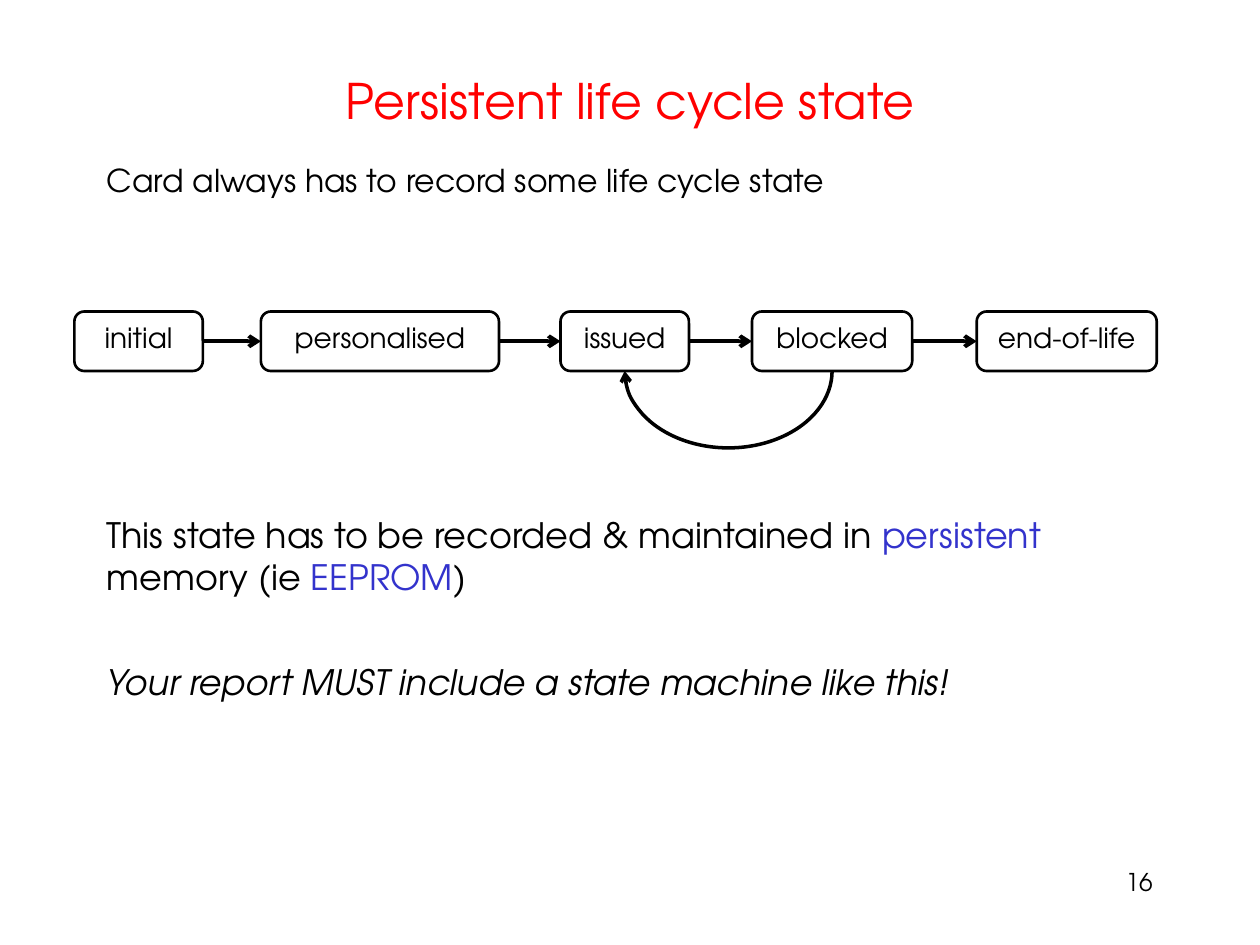
from lxml import etree
from pptx import Presentation
from pptx import util as u
from pptx.dml.color import RGBColor
from pptx.enum import shapes, text
from pptx.oxml import ns

BLACK = RGBColor(0x00, 0x00, 0x00)
RED = RGBColor(0xFF, 0x00, 0x00)
BLUE = RGBColor(0x33, 0x33, 0xCC)
FONT = "TeX Gyre Adventor"

STATES = [
    ("initial", 0, 2.59),
    ("personalised", 3.76, 4.8),
    ("issued", 9.8, 2.59),
    ("blocked", 13.66, 3.23),
    ("end-of-life", 18.19, 3.63),
]
BODY = [
    (0, 18, False, [("Card always has to record some life cycle state", BLACK)]),
    (180, 20, False, [
        ("This state has to be recorded & maintained in ", BLACK),
        ("persistent", BLUE),
        (" memory (ie ", BLACK),
        ("EEPROM", BLUE),
        (")", BLACK),
    ]),
    (36, 20, True, [("Your report MUST include a state machine like this!", BLACK)]),
]


def add_span(para, words, size, color=BLACK, italic=False):
    """Append one formatted run to a paragraph."""
    span = para.add_run()
    span.text = words
    span.font.name = FONT
    span.font.size = u.Pt(size)
    span.font.color.rgb = color
    span.font.italic = italic


def add_text_box(page, left, top, width, height, anchor=text.MSO_ANCHOR.TOP):
    """Add a wrapping text box and return its text frame."""
    box = page.shapes.add_textbox(u.Cm(left), u.Cm(top), u.Cm(width), u.Cm(height))
    frame = box.text_frame
    frame.word_wrap = True
    frame.vertical_anchor = anchor
    return frame


def add_line_label(page, left, top, width, height, words, size, color, align, anchor):
    """Add a single-line label such as the title or page number."""
    para = add_text_box(page, left, top, width, height, anchor).paragraphs[0]
    para.alignment = align
    add_span(para, words, size, color)


def add_body(page, left, top, width, height):
    """Add the statements above and below the state machine."""
    frame = add_text_box(page, left, top, width, height)
    for index, (gap, size, italic, spans) in enumerate(BODY):
        para = frame.add_paragraph() if index else frame.paragraphs[0]
        para.space_before = u.Pt(gap)
        for words, color in spans:
            add_span(para, words, size, color, italic)


def style_arrow(shape, width):
    """Give a line or arc a black stroke that ends in an open arrowhead."""
    shape.line.color.rgb = BLACK
    shape.line.width = u.Pt(width)
    etree.SubElement(shape.line._get_or_add_ln(), ns.qn("a:tailEnd"), type="arrow")


def add_state(page, left, top, width, height, name):
    """Add one rounded state box with its name."""
    box = page.shapes.add_shape(
        shapes.MSO_SHAPE.ROUNDED_RECTANGLE,
        u.Cm(left), u.Cm(top), u.Cm(width), u.Cm(height))
    box.shadow.inherit = False
    box.fill.background()
    box.line.color.rgb = BLACK
    box.line.width = u.Pt(1.5)
    box.text_frame.vertical_anchor = text.MSO_ANCHOR.TOP
    para = box.text_frame.paragraphs[0]
    para.alignment = text.PP_ALIGN.CENTER
    add_span(para, name, 16)
    return box


def add_transition(page, source, target):
    """Join two neighbouring states with a straight arrow."""
    arrow = page.shapes.add_connector(shapes.MSO_CONNECTOR.STRAIGHT, 0, 0, 0, 0)
    arrow.begin_connect(source, 3)
    arrow.end_connect(target, 1)
    style_arrow(arrow, 2.25)
    etree.SubElement(arrow._element.spPr, ns.qn("a:effectLst"))


def add_return_arc(page, source, target, depth):
    """Draw the curved arrow that leads back below two states."""
    start = source.left + source.width // 2
    end = target.left + target.width // 2
    middle = source.top + source.height
    arc = page.shapes.add_shape(
        shapes.MSO_SHAPE.ARC, end, middle - u.Cm(depth), start - end, u.Cm(2 * depth))
    arc.adjustments[0] = 0
    arc.adjustments[1] = 108
    arc.shadow.inherit = False
    arc.fill.background()
    style_arrow(arc, 2)


def add_state_machine(page, left, top, height):
    """Add the row of states and the transitions between them."""
    boxes = {name: add_state(page, left + offset, top, width, height, name)
             for name, offset, width in STATES}
    row = list(boxes.values())
    for source, target in zip(row, row[1:]):
        add_transition(page, source, target)
    add_return_arc(page, boxes["blocked"], boxes["issued"], 1.55)


def main():
    """Build and save the deck."""
    deck = Presentation()
    deck.slide_width, deck.slide_height = u.Cm(25.4), u.Cm(19.05)
    page = deck.slides.add_slide(deck.slide_layouts[6])
    add_line_label(page, 1.9, 0.91, 21.6, 2.21, "Persistent life cycle state",
                   28, RED, text.PP_ALIGN.CENTER, text.MSO_ANCHOR.MIDDLE)
    add_body(page, 1.9, 3.12, 21.6, 13.03)
    add_line_label(page, 18.21, 17.35, 5.28, 1.27, "16",
                   14, BLACK, text.PP_ALIGN.RIGHT, text.MSO_ANCHOR.TOP)
    add_state_machine(page, 1.5, 6.28, 1.2)
    deck.save("out.pptx")


if __name__ == "__main__":
    main()
